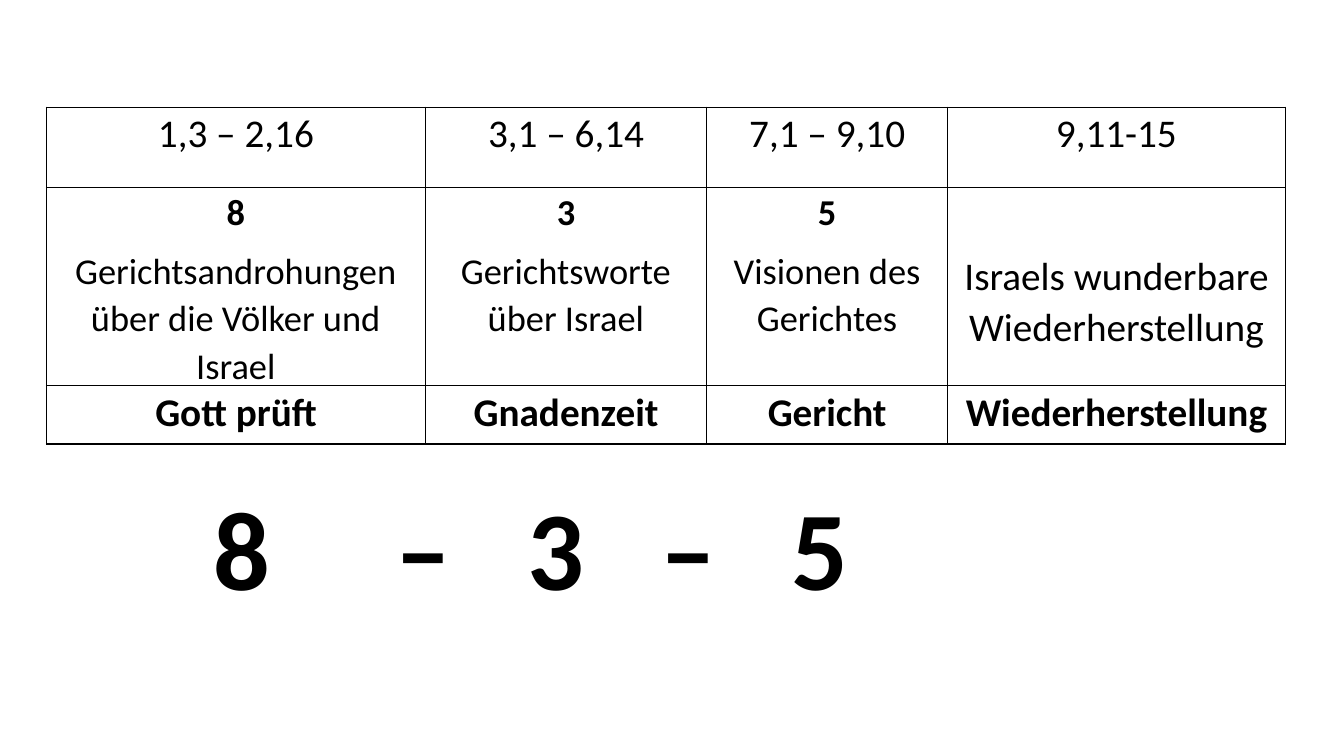
from lxml.etree import SubElement
from pptx import Presentation
from pptx.dml.color import RGBColor
from pptx.enum.text import MSO_AUTO_SIZE, PP_ALIGN
from pptx.oxml.ns import qn
from pptx.util import Cm, Pt

COLORS = {"ink": "000000"}
FONT = "Calibri"
COLUMN_WIDTHS = [9.55, 7.09, 6.07, 8.51]
ROW_HEIGHTS = [2.03, 4.52, 1.47]
PASSAGES = ["1,3 – 2,16", "3,1 – 6,14", "7,1 – 9,10", "9,11-15"]
CONTENTS = [
    ("8", "Gerichtsandrohungen über die Völker und Israel"),
    ("3", "Gerichtsworte über Israel"),
    ("5", "Visionen des Gerichtes"),
    (None, "Israels wunderbare Wiederherstellung"),
]
THEMES = ["Gott prüft", "Gnadenzeit", "Gericht", "Wiederherstellung"]


def write(paragraph, text, size=28, bold=False, align=PP_ALIGN.CENTER,
          line_spacing=1.07, space_after=8):
    paragraph.alignment = align
    paragraph.line_spacing = line_spacing
    paragraph.space_after = Pt(space_after)
    run = paragraph.add_run()
    run.text = text
    run.font.name = FONT
    run.font.size = Pt(size)
    run.font.bold = bold
    run.font.color.rgb = RGBColor.from_string(COLORS["ink"])


class SlideBuilder:
    """Holds the table style and the slide that is being filled."""

    def __init__(self, slide, border=1, side_margin=0.18):
        self.slide = slide
        self.border = border
        self.side_margin = side_margin

    def table(self, left, top, widths, heights):
        shape = self.slide.shapes.add_table(
            len(heights), len(widths), Cm(left), Cm(top),
            Cm(sum(widths)), Cm(sum(heights)))
        table = shape.table
        table.first_row = table.horz_banding = False
        for column, width in zip(table.columns, widths):
            column.width = Cm(width)
        for row, height in zip(table.rows, heights):
            row.height = Cm(height)
        for cell in table.iter_cells():
            self.style_cell(cell)
        return table

    def style_cell(self, cell):
        cell.margin_left = cell.margin_right = Cm(self.side_margin)
        cell.margin_top = cell.margin_bottom = 0
        properties = cell._tc.get_or_add_tcPr()
        for side in ("a:lnL", "a:lnR", "a:lnT", "a:lnB"):
            line = SubElement(properties, qn(side), w=str(Pt(self.border)))
            fill = SubElement(line, qn("a:solidFill"))
            SubElement(fill, qn("a:srgbClr"), val=COLORS["ink"])
        cell.fill.background()

    def tabbed_text(self, left, top, width, height, words, first_stop, step):
        frame = self.slide.shapes.add_textbox(
            Cm(left), Cm(top), Cm(width), Cm(height)).text_frame
        frame.word_wrap = True
        frame.auto_size = MSO_AUTO_SIZE.SHAPE_TO_FIT_TEXT
        paragraph = frame.paragraphs[0]
        write(paragraph, "\t".join(words), size=80, bold=True,
              align=PP_ALIGN.LEFT, line_spacing=1.0, space_after=0)
        stops = SubElement(paragraph._p.get_or_add_pPr(), qn("a:tabLst"))
        for index in range(len(words) - 1):
            SubElement(stops, qn("a:tab"),
                       pos=str(Cm(first_stop + index * step)), algn="ctr")


def main():
    presentation = Presentation()
    presentation.slide_width, presentation.slide_height = Cm(33.87), Cm(19.05)
    slide = presentation.slides.add_slide(presentation.slide_layouts[6])
    builder = SlideBuilder(slide)

    builder.tabbed_text(5.13, 11.94, 18.67, 3.68, ["8", "–", "3", "–", "5"],
                        first_stop=5.3, step=3.33)

    table = builder.table(1.17, 2.7, COLUMN_WIDTHS, ROW_HEIGHTS)
    for column, (passage, content, theme) in enumerate(
            zip(PASSAGES, CONTENTS, THEMES)):
        write(table.cell(0, column).text_frame.paragraphs[0], passage)
        write(table.cell(2, column).text_frame.paragraphs[0], theme, bold=True)
        count, description = content
        cell = table.cell(1, column)
        paragraph = cell.text_frame.paragraphs[0]
        if count:
            write(paragraph, count, size=26, bold=True)
            paragraph = cell.text_frame.add_paragraph()
        else:
            cell.margin_top = Cm(1.57)
        write(paragraph, description, size=26 if count else 28)

    presentation.save("out.pptx")


if __name__ == "__main__":
    main()
